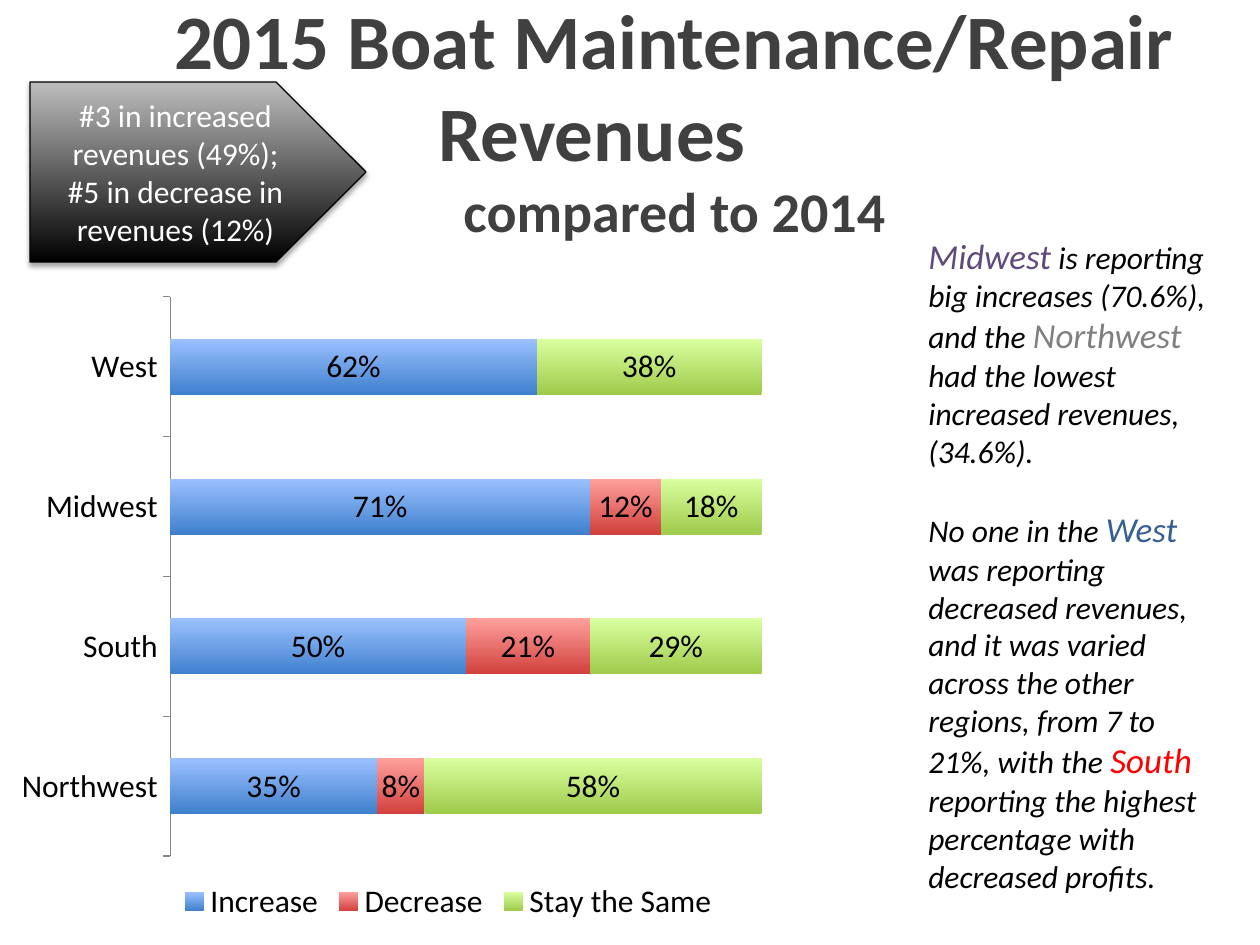
import lxml.etree
import pptx
import pptx.chart.data
import pptx.dml.color
import pptx.enum.chart
import pptx.enum.shapes
import pptx.enum.text
import pptx.oxml
import pptx.oxml.ns
import pptx.util

RGBColor = pptx.dml.color.RGBColor
BLACK = RGBColor(0x00, 0x00, 0x00)
WHITE = RGBColor(0xFF, 0xFF, 0xFF)
SILVER = RGBColor(0xBD, 0xBD, 0xBD)
CHARCOAL = RGBColor(0x40, 0x40, 0x40)
AXIS_GREY = RGBColor(0x86, 0x86, 0x86)
MIDWEST_PURPLE = RGBColor(0x60, 0x4A, 0x7B)
NORTHWEST_GREY = RGBColor(0x80, 0x80, 0x80)
WEST_BLUE = RGBColor(0x37, 0x60, 0x92)
SOUTH_RED = RGBColor(0xFF, 0x00, 0x00)
INCREASE = (RGBColor(0x3F, 0x80, 0xCD), RGBColor(0x9B, 0xC1, 0xFF))
DECREASE = (RGBColor(0xD1, 0x40, 0x3C), RGBColor(0xFF, 0xA0, 0x9D))
SAME = (RGBColor(0x9F, 0xCA, 0x4A), RGBColor(0xD9, 0xFF, 0x9F))

CENTER = pptx.enum.text.PP_ALIGN.CENTER
LEFT = pptx.enum.text.PP_ALIGN.LEFT


def px(length):
    return pptx.util.Emu(round(length * 914400 / 126))


def shade(fill, bottom_and_top):
    fill.gradient()
    fill.gradient_angle = 90
    for stop, color, position in zip(fill.gradient_stops, bottom_and_top, (0, 1)):
        stop.color.rgb = color
        stop.position = position


class SlideBuilder:
    font_name = "Calibri"
    body_size = 18

    def __init__(self, slide):
        self.slide = slide

    def style(self, font, size, color):
        font.name = self.font_name
        font.size = pptx.util.Pt(size)
        font.color.rgb = color

    def paragraph(self, frame, runs, align=LEFT, bold=False, italic=False):
        if frame.paragraphs[0].runs:
            paragraph = frame.add_paragraph()
        else:
            paragraph = frame.paragraphs[0]
        paragraph.alignment = align
        for words, size, color in runs:
            run = paragraph.add_run()
            run.text = words
            self.style(run.font, size, color)
            run.font.bold = bold
            run.font.italic = italic
        return paragraph

    def text_box(self, *box):
        frame = self.slide.shapes.add_textbox(*map(px, box)).text_frame
        frame.word_wrap = True
        frame.auto_size = pptx.enum.text.MSO_AUTO_SIZE.SHAPE_TO_FIT_TEXT
        return frame

    def callout(self, lines, *box):
        arrow = self.slide.shapes.add_shape(
            pptx.enum.shapes.MSO_SHAPE.PENTAGON, *map(px, box))
        shade(arrow.fill, (BLACK, SILVER))
        arrow.line.color.rgb = BLACK
        arrow.line.width = pptx.util.Pt(0.75)
        arrow.shadow.inherit = False
        effects = arrow.element.spPr.find(pptx.oxml.ns.qn("a:effectLst"))
        effects.append(pptx.oxml.parse_xml(
            f'<a:outerShdw {pptx.oxml.ns.nsdecls("a")} blurRad="40000" dist="23000" '
            'dir="5400000" rotWithShape="0"><a:srgbClr val="000000">'
            '<a:alpha val="35000"/></a:srgbClr></a:outerShdw>'))
        arrow.text_frame.vertical_anchor = pptx.enum.text.MSO_ANCHOR.MIDDLE
        for line in lines:
            self.paragraph(arrow.text_frame, [(line, self.body_size, WHITE)], CENTER)

    def stacked_bars(self, regions, answers, plot_area, *box):
        data = pptx.chart.data.CategoryChartData(number_format="0%")
        data.categories = regions
        for name, shares, _ in answers:
            data.add_series(name, shares)
        chart = self.slide.shapes.add_chart(
            pptx.enum.chart.XL_CHART_TYPE.BAR_STACKED, *map(px, box), data).chart
        self.style(chart.font, self.body_size, BLACK)
        chart.has_title = False
        chart.has_legend = True
        chart.legend.position = pptx.enum.chart.XL_LEGEND_POSITION.BOTTOM
        chart.legend.include_in_layout = False
        self.style(chart.legend.font, self.body_size, BLACK)

        plot = chart.plots[0]
        plot.gap_width = 150
        plot.overlap = 100
        plot.vary_by_categories = False
        for series, (_, _, colors) in zip(plot.series, answers):
            shade(series.format.fill, colors)
            labels = series.data_labels
            labels.show_value = True
            labels.number_format = "0%"
            labels.number_format_is_linked = False
            self.style(labels.font, self.body_size, BLACK)

        region_axis = chart.category_axis
        region_axis.format.line.color.rgb = AXIS_GREY
        region_axis.major_tick_mark = pptx.enum.chart.XL_TICK_MARK.OUTSIDE
        self.style(region_axis.tick_labels.font, self.body_size, BLACK)
        share_axis = chart.value_axis
        share_axis.minimum_scale = 0
        share_axis.maximum_scale = 1
        share_axis.has_major_gridlines = False
        share_axis.visible = False
        self.place_plot(chart, plot_area)

    def place_plot(self, chart, plot_area):
        qn = pptx.oxml.ns.qn
        area = chart.element.find(f'.//{qn("c:plotArea")}')
        for old in area.findall(qn("c:layout")):
            area.remove(old)
        layout = lxml.etree.Element(qn("c:layout"))
        manual = lxml.etree.SubElement(layout, qn("c:manualLayout"))
        settings = [("layoutTarget", "inner"), ("xMode", "edge"), ("yMode", "edge")]
        settings += zip("xywh", map(str, plot_area))
        for tag, value in settings:
            lxml.etree.SubElement(manual, qn(f"c:{tag}")).set("val", value)
        area.insert(0, layout)


def main():
    deck = pptx.Presentation()
    deck.slide_width = px(1260)
    deck.slide_height = px(945)
    page = SlideBuilder(deck.slides.add_slide(deck.slide_layouts[6]))

    title = page.text_box(30, -14, 1289, 267)
    page.paragraph(title, [("2015 Boat Maintenance/Repair", 44, CHARCOAL)], CENTER, bold=True)
    revenues = page.paragraph(title, [("Revenues", 44, CHARCOAL)], bold=True)
    revenues_properties = revenues._p.get_or_add_pPr()
    revenues_properties.set("marL", str(px(396)))
    revenues_properties.set("indent", "0")
    page.paragraph(title, [("compared to 2014", 32, CHARCOAL)], CENTER, bold=True)

    page.callout(
        ["#3 in increased revenues (49%);", "#5 in decrease in revenues (12%)"],
        30, 82, 336, 180)

    page.stacked_bars(
        ["Northwest", "South", "Midwest", "West"],
        [("Increase", (0.35, 0.50, 0.71, 0.62), INCREASE),
         ("Decrease", (0.08, 0.21, 0.12, None), DECREASE),
         ("Stay the Same", (0.58, 0.29, 0.18, 0.38), SAME)],
        (0.19, 0.02, 0.66, 0.87),
        0, 284, 896, 643)

    comments = page.text_box(916, 228, 312, 679)
    page.paragraph(comments, [
        ("Midwest", 20, MIDWEST_PURPLE),
        (" is reporting big increases (70.6%), and the ", 18, BLACK),
        ("Northwest", 20, NORTHWEST_GREY),
        (" had the lowest increased revenues, (34.6%).", 18, BLACK),
    ], italic=True)
    decreases = page.paragraph(comments, [
        ("No one in the ", 18, BLACK),
        ("West", 20, WEST_BLUE),
        (" was reporting decreased revenues, and it was varied across the other "
         "regions, from 7 to 21%, with the ", 18, BLACK),
        ("South", 20, SOUTH_RED),
        (" reporting the highest percentage with decreased profits.", 18, BLACK),
    ], italic=True)
    decreases.space_before = pptx.util.Pt(22)

    deck.save("out.pptx")


if __name__ == "__main__":
    main()
